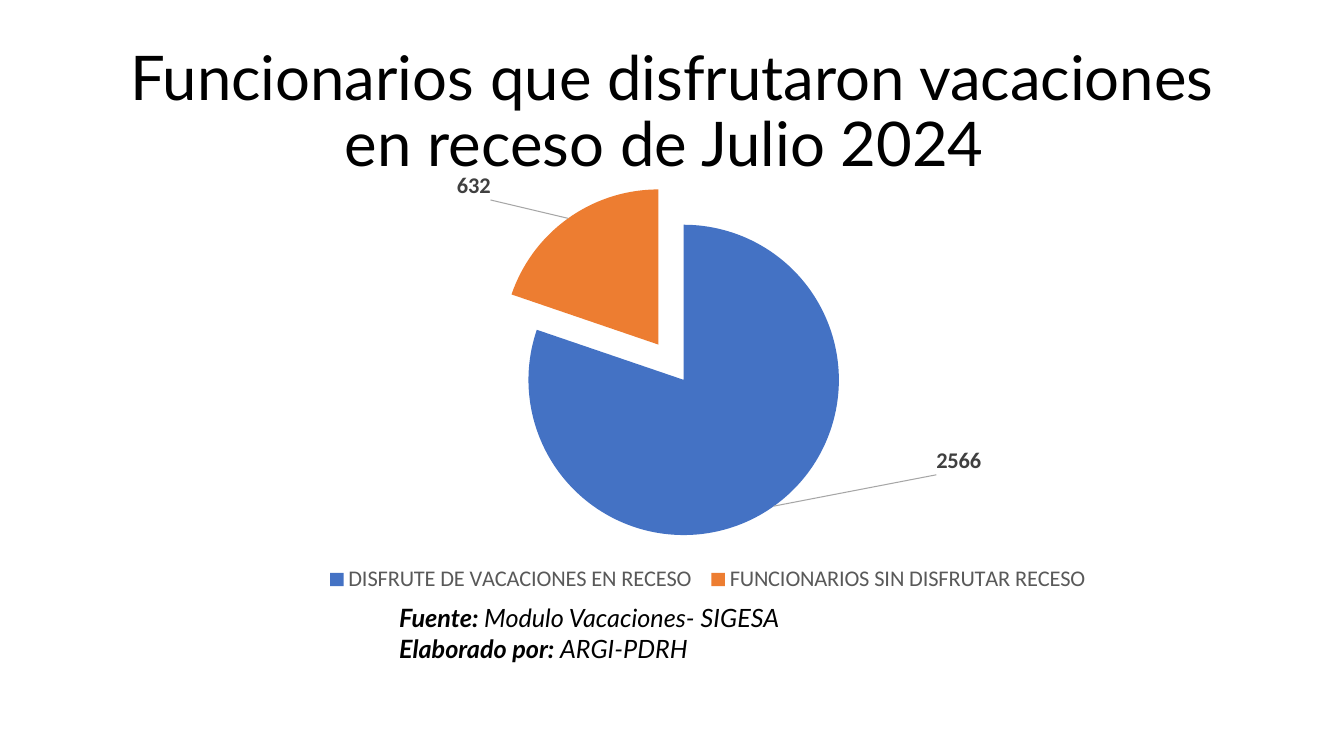
from lxml import etree
from pptx import Presentation
from pptx.chart import data
from pptx.dml import color
from pptx.enum import chart as chart_enum, text
from pptx.oxml import ns, parse_xml
from pptx.util import Inches, Pt


def rgb(value):
    return color.RGBColor.from_string(value)


def manual_layout(**settings):
    layout = etree.Element(ns.qn("c:layout"))
    manual = etree.SubElement(layout, ns.qn("c:manualLayout"))
    for name, value in settings.items():
        etree.SubElement(manual, ns.qn(f"c:{name}")).set("val", str(value))
    return parse_xml(etree.tostring(layout))


class SlideBuilder:
    text_font = "Lato"
    chart_font = "Calibri"
    black = "000000"
    label_gray = "404040"
    legend_gray = "595959"
    leader_gray = "A6A6A6"

    def __init__(self, slide):
        self.slide = slide

    def style(self, font, name, size, hex_color, bold=False, italic=False):
        font.name = name
        font.size = Pt(size)
        font.color.rgb = rgb(hex_color)
        font.bold = bold
        font.italic = italic

    def text_box(self, left, top, width, height):
        shape = self.slide.shapes.add_textbox(
            Inches(left), Inches(top), Inches(width), Inches(height))
        shape.text_frame.word_wrap = True
        return shape.text_frame

    def title(self, wording, *place):
        frame = self.text_box(*place)
        frame.vertical_anchor = text.MSO_ANCHOR.MIDDLE
        frame.text = wording
        paragraph = frame.paragraphs[0]
        paragraph.alignment = text.PP_ALIGN.CENTER
        paragraph.line_spacing = 0.9
        self.style(paragraph.runs[0].font, self.text_font, 44, self.black)

    def credits(self, entries, *place):
        frame = self.text_box(*place)
        frame.auto_size = text.MSO_AUTO_SIZE.SHAPE_TO_FIT_TEXT
        frame.text = "\n".join(heading for heading, _ in entries)
        for paragraph, (_, detail) in zip(frame.paragraphs, entries):
            paragraph._p.get_or_add_pPr().set("marL", str(Inches(0.59)))
            paragraph.add_run().text = detail
            for run, bold in zip(paragraph.runs, (True, False)):
                self.style(run.font, self.text_font, 18, self.black, bold, True)

    def pie(self, slices, left, top, width, height):
        chart_data = data.CategoryChartData()
        chart_data.categories = [name for name, *_ in slices]
        chart_data.add_series("Series 1", [value for _, value, *_ in slices])
        chart = self.slide.shapes.add_chart(
            chart_enum.XL_CHART_TYPE.PIE, Inches(left), Inches(top),
            Inches(width), Inches(height), chart_data).chart
        chart.has_title = False
        self.style(chart.font, self.chart_font, 10, self.black)
        chart.has_legend = True
        chart.legend.position = chart_enum.XL_LEGEND_POSITION.BOTTOM
        chart.legend.include_in_layout = False
        self.style(chart.legend.font, self.chart_font, 16, self.legend_gray)

        plot = chart.plots[0]
        plot.vary_by_categories = True
        plot_area = chart._chartSpace.find(".//" + ns.qn("c:plotArea"))
        for layout in plot_area.findall(ns.qn("c:layout")):
            plot_area.remove(layout)
        plot_area.insert(0, manual_layout(
            layoutTarget="inner", xMode="edge", yMode="edge",
            x=0.293, y=0.091, w=0.34, h=0.78))

        series = plot.series[0]
        explosion = etree.Element(ns.qn("c:explosion"), val="14")
        series._element.find(ns.qn("c:tx")).addnext(explosion)
        labels = series.data_labels
        labels.show_value = True
        self.label(labels)
        for index, (_, _, fill, x, y) in enumerate(slices):
            point = series.points[index]
            point.format.fill.solid()
            point.format.fill.fore_color.rgb = rgb(fill)
            self.label(point.data_label)
            label = labels._element.findall(ns.qn("c:dLbl"))[index]
            label.find(ns.qn("c:idx")).addnext(manual_layout(x=x, y=y))
        self.leader_lines(labels._element)

    def label(self, label):
        self.style(label.font, self.chart_font, 16, self.label_gray, True)
        label.position = chart_enum.XL_LABEL_POSITION.BEST_FIT

    def leader_lines(self, labels):
        for shown in labels.findall(ns.qn("c:showLeaderLines")):
            labels.remove(shown)
        etree.SubElement(labels, ns.qn("c:showLeaderLines"), val="1")
        lines = etree.SubElement(labels, ns.qn("c:leaderLines"))
        properties = etree.SubElement(lines, ns.qn("c:spPr"))
        line = etree.SubElement(properties, ns.qn("a:ln"), w=str(Pt(0.75)))
        fill = etree.SubElement(line, ns.qn("a:solidFill"))
        etree.SubElement(fill, ns.qn("a:srgbClr"), val=self.leader_gray)


def main():
    presentation = Presentation()
    presentation.slide_width = Inches(13.33)
    presentation.slide_height = Inches(7.5)
    builder = SlideBuilder(
        presentation.slides.add_slide(presentation.slide_layouts[6]))
    builder.title(
        "Funcionarios que disfrutaron vacaciones en receso de Julio 2024 ",
        0.92, 0.4, 11.5, 1.45)
    builder.pie([
        ("DISFRUTE DE VACACIONES EN RECESO ", 2566, "4472C4", 0.15, -0.14),
        ("FUNCIONARIOS SIN DISFRUTAR RECESO ", 632, "ED7D31", -0.07, -0.03),
    ], 1.79, 1.43, 10.51, 4.5)
    builder.credits([
        ("Fuente: ", "Modulo Vacaciones- SIGESA"),
        ("Elaborado por: ", "ARGI-PDRH"),
    ], 3.27, 5.93, 6.67, 0.71)
    presentation.save("out.pptx")


if __name__ == "__main__":
    main()
